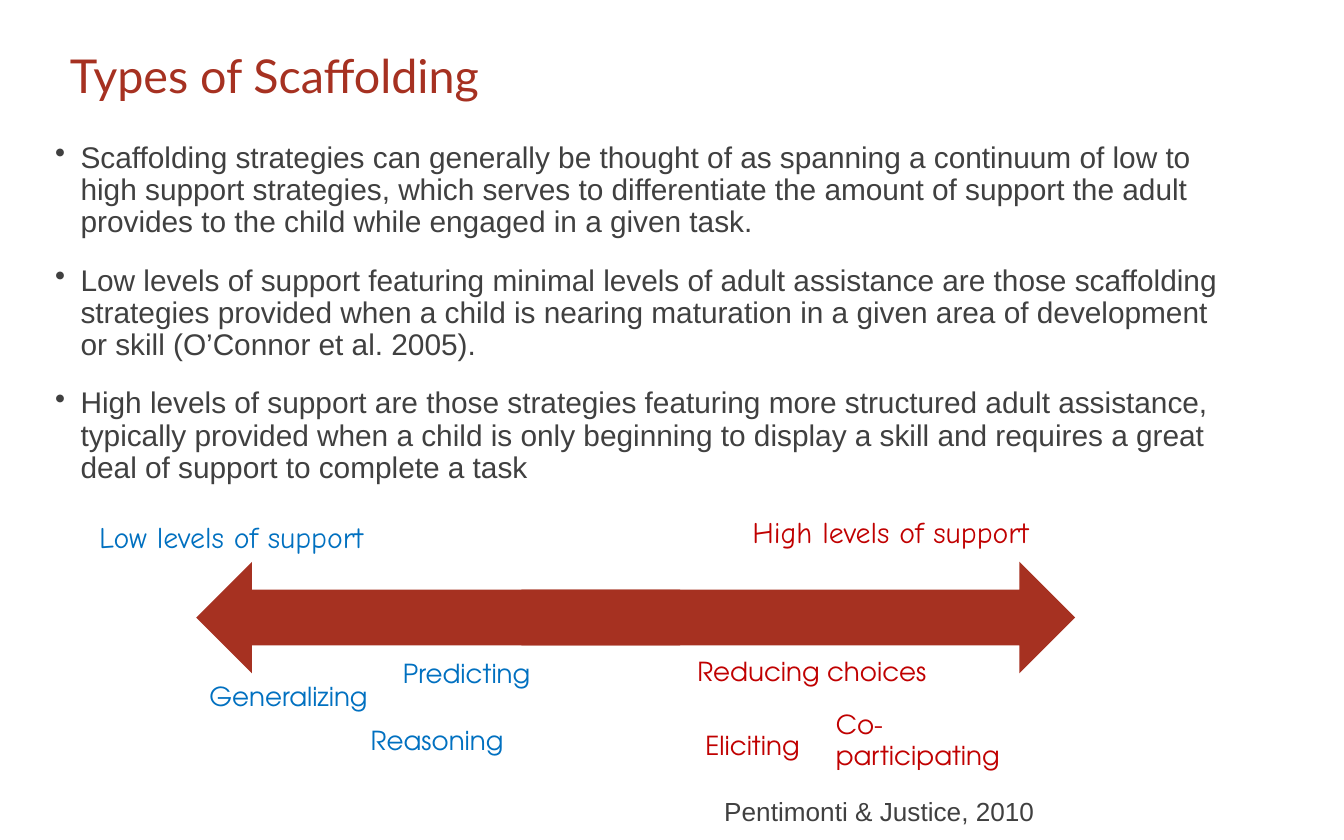
from dataclasses import dataclass

import pptx
import pptx.dml.color
import pptx.enum.shapes
import pptx.enum.text
import pptx.oxml.ns
import pptx.util
from lxml import etree

RUST = pptx.dml.color.RGBColor(0xA6, 0x31, 0x21)
GRAY = pptx.dml.color.RGBColor(0x40, 0x40, 0x40)
BLUE = pptx.dml.color.RGBColor(0x00, 0x70, 0xC0)
RED = pptx.dml.color.RGBColor(0xC0, 0x00, 0x00)

CELL = pptx.util.Inches(0.1)  # the slide is a grid of 100 columns by 62.5 rows
COLUMNS, ROWS = 100, 62.5
LABEL_ROWS, EXAMPLE_ROWS = 3.7, 3.4
HANGING = pptx.util.Inches(0.19)


@dataclass
class Box:
    """A region measured in grid columns and rows."""
    col: float
    row: float
    cols: float
    rows: float

    def inner(self, col, row, cols, rows):
        return Box(self.col + col, self.row + row, cols, rows)

    def emu(self):
        return [round(n * CELL) for n in (self.col, self.row, self.cols, self.rows)]


def add_bullet(paragraph):
    properties = paragraph._p.get_or_add_pPr()
    properties.set("marL", str(HANGING))
    properties.set("indent", str(-HANGING))
    etree.SubElement(properties, pptx.oxml.ns.qn("a:buChar"), char="•")


def add_text(slide, box, *lines, size=14, font="Arial", color=GRAY, bullets=False,
             spacing=None, gap=0, inset=(0.1, 0.05),
             anchor=pptx.enum.text.MSO_ANCHOR.TOP):
    frame = slide.shapes.add_textbox(*box.emu()).text_frame
    frame.word_wrap = True
    frame.vertical_anchor = anchor
    frame.margin_left = frame.margin_right = pptx.util.Inches(inset[0])
    frame.margin_top = frame.margin_bottom = pptx.util.Inches(inset[1])
    for index, line in enumerate(lines):
        paragraph = frame.add_paragraph() if index else frame.paragraphs[0]
        if bullets:
            add_bullet(paragraph)
        if spacing:
            paragraph.line_spacing = spacing
        if index and gap:
            paragraph.space_before = pptx.util.Pt(gap)
        run = paragraph.add_run()
        run.text = line
        run.font.name = font
        run.font.size = pptx.util.Pt(size)
        run.font.color.rgb = color


def add_title(slide, box):
    add_text(slide, box, "Types of Scaffolding", size=25, font="Lato", color=RUST,
             spacing=0.9, inset=(0.08, 0.04),
             anchor=pptx.enum.text.MSO_ANCHOR.BOTTOM)


def add_explanation(slide, box):
    add_text(
        slide, box,
        "Scaffolding strategies can generally be thought of as spanning a continuum "
        "of low to high support strategies, which serves to differentiate the amount "
        "of support the adult provides to the child while engaged in a given task.",
        "Low levels of support featuring minimal levels of adult assistance are those "
        "scaffolding strategies provided when a child is nearing maturation in a given "
        "area of development or skill (O’Connor et al. 2005).",
        "High levels of support are those strategies featuring more structured adult "
        "assistance, typically provided when a child is only beginning to display a "
        "skill and requires a great deal of support to complete a task",
        size=16, bullets=True, spacing=0.9, gap=14, inset=(0.08, 0.04))


def add_arrow(slide, box, rotation=0):
    arrow = slide.shapes.add_shape(
        pptx.enum.shapes.MSO_SHAPE.RIGHT_ARROW, *box.emu())
    arrow.rotation = rotation
    arrow.shadow.inherit = False
    arrow.fill.solid()
    arrow.fill.fore_color.rgb = RUST
    arrow.line.fill.background()


def add_support_level(slide, box, label, examples, color):
    """Write one end of the continuum: its label and the strategies below."""
    text, col, row, cols = label
    add_text(slide, box.inner(col, row, cols, LABEL_ROWS), text,
             size=16, font="Comic Neue", color=color)
    for text, col, row, cols in examples:
        add_text(slide, box.inner(col, row, cols, EXAMPLE_ROWS), text,
                 font="TeX Gyre Adventor", color=color)


def add_continuum(slide, box):
    add_arrow(slide, box.inner(32.4, 4.1, 41.2, 8.3))
    add_arrow(slide, box.inner(8.2, 4.1, 36, 8.3), rotation=180)
    add_support_level(
        slide, box, ("Low levels of support", 0, 0.4, 29.7),
        [("Generalizing", 8.2, 12.4, 14.1),
         ("Reasoning", 20.2, 15.7, 12.1),
         ("Predicting", 22.6, 10.7, 11.9)], BLUE)
    add_support_level(
        slide, box, ("High levels of support", 48.6, 0, 30.1),
        [("Eliciting", 45.1, 16.1, 9.7),
         ("Reducing choices", 44.5, 10.6, 19.1),
         ("Co-participating", 54.8, 14.5, 17.5)], RED)


def add_citation(slide, box):
    add_text(slide, box, "Pentimonti & Justice, 2010")


def main():
    deck = pptx.Presentation()
    deck.slide_width = round(COLUMNS * CELL)
    deck.slide_height = round(ROWS * CELL)
    slide = deck.slides.add_slide(deck.slide_layouts[6])
    add_title(slide, Box(4.4, 1.9, 80.6, 6.2))
    add_explanation(slide, Box(3.3, 10.2, 88.3, 26.1))
    add_continuum(slide, Box(6.4, 37.7, 78.7, 20))
    add_citation(slide, Box(52.9, 58.7, 25.2, 3.4))
    deck.save("out.pptx")


if __name__ == "__main__":
    main()
